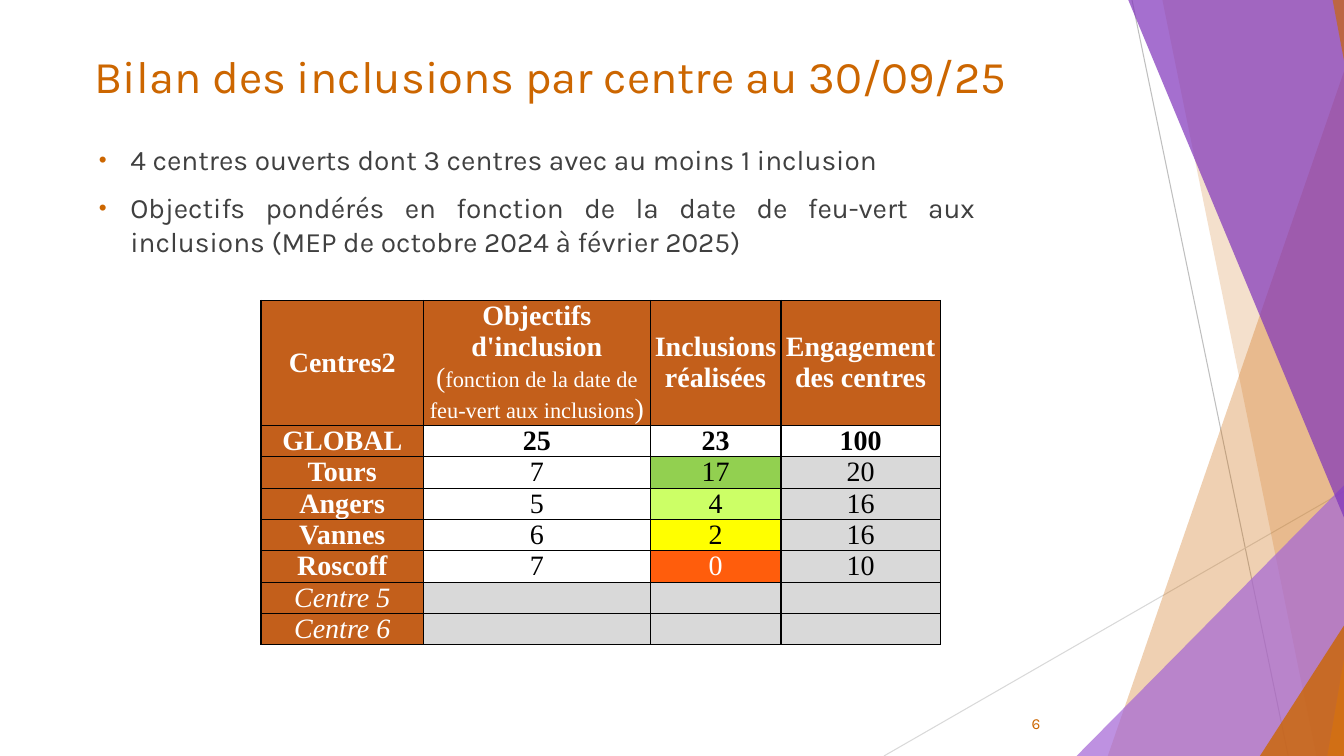
from lxml.etree import SubElement
from pptx import Presentation
from pptx.dml.color import RGBColor
from pptx.enum.shapes import MSO_CONNECTOR, MSO_SHAPE
from pptx.enum.text import MSO_ANCHOR, MSO_AUTO_SIZE, PP_ALIGN
from pptx.oxml.ns import qn
from pptx.util import Pt

ORANGE = RGBColor(0xCC, 0x66, 0x00)
PEACH = RGBColor(0xFF, 0xA3, 0x47)
LILAC = RGBColor(0xA5, 0x67, 0xD6)
PURPLE = RGBColor(0x7F, 0x33, 0xBB)
MID_GREY = RGBColor(0xBF, 0xBF, 0xBF)
PALE_GREY = RGBColor(0xD9, 0xD9, 0xD9)
DARK_GREY = RGBColor(0x40, 0x40, 0x40)
BLACK = RGBColor(0x00, 0x00, 0x00)
WHITE = RGBColor(0xFF, 0xFF, 0xFF)
RUST = RGBColor(0xC3, 0x5F, 0x1B)
GREEN = RGBColor(0x92, 0xD0, 0x50)
LIME = RGBColor(0xCC, 0xFF, 0x66)
YELLOW = RGBColor(0xFF, 0xFF, 0x00)
RED = RGBColor(0xFF, 0x5D, 0x0C)
SANS, SERIF = "Karla", "Times New Roman"

# Content
TITLE = "Bilan des inclusions par centre au 30/09/25"
BULLETS = [
    "4 centres ouverts dont 3 centres avec au moins 1 inclusion",
    "Objectifs pondérés en fonction de la date de feu-vert aux inclusions "
    "(MEP de octobre 2024 à février 2025)",
]
PAGE_NUMBER = "6"
# Each header is a list of paragraphs, each paragraph a list of (text, size, bold)
HEADERS = [
    [[("Centres2", 20, True)]],
    [[("Objectifs d'inclusion", 20, True)],
     [("(", 20, False),
      ("fonction de la date de feu-vert aux inclusions", 16, False),
      (")", 20, False)]],
    [[("Inclusions\nréalisées", 20, True)]],
    [[("Engagement des centres", 20, True)]],
]
CENTRES = [
    ("GLOBAL", "25", "23", "100"),
    ("Tours", "7", "17", "20"),
    ("Angers", "5", "4", "16"),
    ("Vannes", "6", "2", "16"),
    ("Roscoff", "7", "0", "10"),
    ("Centre 5", "", "", ""),
    ("Centre 6", "", "", ""),
]
RESULT_FILLS = {"Tours": GREEN, "Angers": LIME, "Vannes": YELLOW, "Roscoff": RED}

# Layout
WIDTH, HEIGHT = 960, 540
BLEED_RIGHT, BLEED_TOP = 1065.6, -0.5
COLUMN_WIDTHS = [116, 162, 93.4, 113.8]
HEADER_HEIGHT, ROW_HEIGHT = 89.2, 22.4
RULES = [((808.6, 0), (920.2, 540), MID_GREY), ((1065.6, 290.2), (631.4, 540), PALE_GREY)]
# Bands: x at the top, x at the bottom; triangles: left, top
FACETS = [
    ("band", 977.8, 791.3, ORANGE, 30),
    ("band", 830.2, 940.3, ORANGE, 20),
    ("triangle", 769, 239.8, LILAC, 72),
    ("band", 805.7, 1031, PURPLE, 70),
    ("band", 1041.1, 948.2, PEACH, 70),
    ("band", 951.8, 1053.4, ORANGE, 65),
    ("triangle", 900, 283, ORANGE, 80),
]


def add_span(para, text, font, size, color, bold=False, italic=False):
    for index, line in enumerate(text.split("\n")):
        if index:
            para.add_line_break()
        span = para.add_run()
        span.text = line
        span.font.name, span.font.size = font, Pt(size)
        span.font.color.rgb = color
        span.font.bold, span.font.italic = bold, italic


def place(shape, left, top, width, height):
    shape.left, shape.top, shape.width, shape.height = map(Pt, (left, top, width, height))


def add_rule(page, start, end, color):
    rule = page.shapes.add_connector(MSO_CONNECTOR.STRAIGHT, *map(Pt, start + end))
    rule.line.color.rgb, rule.line.width = color, Pt(0.75)
    SubElement(rule._element.spPr, qn("a:effectLst"))


def add_facet(page, kind, first, second, color, opacity):
    if kind == "band":
        builder = page.shapes.build_freeform(Pt(first), Pt(BLEED_TOP))
        corners = [(BLEED_RIGHT, BLEED_TOP), (BLEED_RIGHT, HEIGHT), (second, HEIGHT)]
        builder.add_line_segments([(Pt(x), Pt(y)) for x, y in corners])
        facet = builder.convert_to_shape()
    else:
        facet = page.shapes.add_shape(
            MSO_SHAPE.ISOSCELES_TRIANGLE, Pt(first), Pt(second),
            Pt(BLEED_RIGHT - first), Pt(HEIGHT - second))
        facet.adjustments[0] = 1
    facet.shadow.inherit = False
    facet.line.fill.background()
    facet.fill.solid()
    facet.fill.fore_color.rgb = color
    tint = facet._element.spPr.find(qn("a:solidFill")).find(qn("a:srgbClr"))
    SubElement(tint, qn("a:alpha"), val=str(opacity * 1000))


def add_bullet(para):
    props = para._p.get_or_add_pPr()
    props.set("marL", str(Pt(58.5)))
    props.set("indent", str(Pt(-22.5)))
    SubElement(SubElement(props, qn("a:buClr")), qn("a:srgbClr"), val=str(ORANGE))
    SubElement(props, qn("a:buSzPct"), val="80000")
    SubElement(props, qn("a:buFont"), typeface="Arial")
    SubElement(props, qn("a:buChar"), char="•")


def format_cell(cell, fill, top, bottom):
    cell.margin_left = cell.margin_right = cell.margin_top = cell.margin_bottom = 0
    cell.vertical_anchor = MSO_ANCHOR.MIDDLE
    props = cell._tc.get_or_add_tcPr()
    for side, width in (("L", 1), ("R", 1), ("T", top), ("B", bottom)):
        edge = SubElement(props, qn(f"a:ln{side}"), w=str(Pt(width)))
        SubElement(SubElement(edge, qn("a:solidFill")), qn("a:srgbClr"), val=str(BLACK))
    cell.fill.solid()
    cell.fill.fore_color.rgb = fill


def cell_fill(name, column, text):
    if column == 0:
        return RUST
    if not text or (column == 3 and name != "GLOBAL"):
        return PALE_GREY
    return RESULT_FILLS.get(name, WHITE) if column == 2 else WHITE


def add_centres_table(page):
    count = len(CENTRES) + 1
    frame = page.shapes.add_table(
        count, len(HEADERS), Pt(186.5), Pt(214.6), Pt(sum(COLUMN_WIDTHS)),
        Pt(HEADER_HEIGHT + ROW_HEIGHT * len(CENTRES)))
    table = frame.table
    table.first_row = table.horz_banding = False
    for column, width in zip(table.columns, COLUMN_WIDTHS):
        column.width = Pt(width)
    for index, row in enumerate(table.rows):
        row.height = Pt(ROW_HEIGHT if index else HEADER_HEIGHT)

    # Header row
    for column, paragraphs in enumerate(HEADERS):
        cell = table.cell(0, column)
        format_cell(cell, RUST, 1, 1)
        for index, spans in enumerate(paragraphs):
            para = cell.text_frame.add_paragraph() if index else cell.text_frame.paragraphs[0]
            para.alignment = PP_ALIGN.CENTER
            for text, size, bold in spans:
                add_span(para, text, SERIF, size, WHITE, bold)

    # One row per centre
    for row, values in enumerate(CENTRES, 1):
        name, is_open = values[0], bool(values[1])
        for column, text in enumerate(values):
            cell = table.cell(row, column)
            fill = cell_fill(name, column, text)
            format_cell(cell, fill, 1 if row <= 2 else 0.5, 1 if row in (1, count - 1) else 0.5)
            if text:
                para = cell.text_frame.paragraphs[0]
                para.alignment = PP_ALIGN.CENTER
                add_span(para, text, SERIF, 20, WHITE if fill in (RUST, RED) else BLACK,
                         bold=name == "GLOBAL" or (column == 0 and is_open),
                         italic=not is_open)


def main():
    deck = Presentation()
    deck.slide_width, deck.slide_height = Pt(WIDTH), Pt(HEIGHT)
    page = deck.slides.add_slide(deck.slide_layouts[1])

    # Decorative right side
    for rule in RULES:
        add_rule(page, *rule)
    for facet in FACETS:
        add_facet(page, *facet)

    # Title
    title = page.shapes.title
    place(title, 60.5, 27.4, 711.4, 57.6)
    title.text_frame.auto_size = MSO_AUTO_SIZE.NONE
    title.text_frame.vertical_anchor = MSO_ANCHOR.MIDDLE
    para = title.text_frame.paragraphs[0]
    para.alignment, para.line_spacing = PP_ALIGN.LEFT, 0.9
    add_span(para, TITLE, SANS, 32.4, ORANGE)

    # Bullet list
    body = page.placeholders[1]
    place(body, 27.4, 98.5, 676.8, 117.4)
    body.text_frame.auto_size = MSO_AUTO_SIZE.NONE
    for index, text in enumerate(BULLETS):
        para = body.text_frame.add_paragraph() if index else body.text_frame.paragraphs[0]
        para.level = 1
        add_bullet(para)
        para.alignment = PP_ALIGN.JUSTIFY
        para.space_before = Pt(10 if index else 0)
        add_span(para, text, SANS, 20, DARK_GREY)

    add_centres_table(page)

    # Page number
    box = page.shapes.add_textbox(Pt(696.2), Pt(502.6), Pt(54), Pt(28.8))
    box.text_frame.word_wrap = True
    box.text_frame.vertical_anchor = MSO_ANCHOR.MIDDLE
    para = box.text_frame.paragraphs[0]
    para.alignment = PP_ALIGN.RIGHT
    add_span(para, PAGE_NUMBER, SANS, 11, ORANGE)

    deck.save("out.pptx")


if __name__ == "__main__":
    main()
